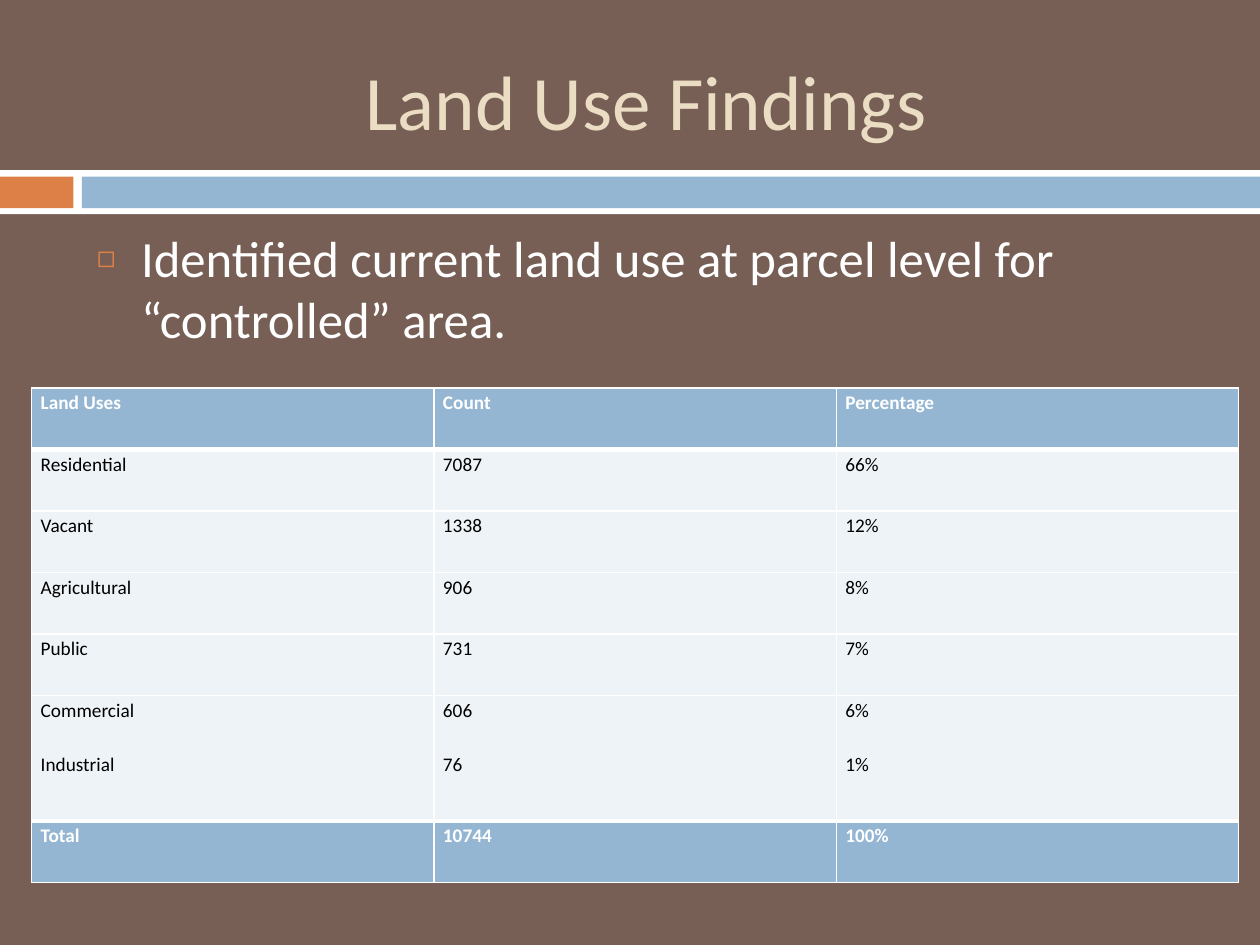
from lxml.etree import SubElement
from pptx import Presentation
from pptx.dml.color import RGBColor
from pptx.enum.shapes import MSO_SHAPE
from pptx.enum.text import MSO_ANCHOR, PP_ALIGN
from pptx.oxml.ns import qn
from pptx.util import Cm, Pt

WHITE, ORANGE, BLUE, PALE = "FFFFFF", "DD8047", "94B6D2", "EEF3F7"


def paint(fill, color):
    fill.solid()
    fill.fore_color.rgb = RGBColor.from_string(color)


def style(paragraph, size, color, bold=False):
    font = paragraph.font
    font.name, font.size, font.bold = "Calibri", Pt(size), bold
    paint(font.fill, color)


prs = Presentation()
prs.slide_width, prs.slide_height = Cm(25.4), Cm(19.05)
slide = prs.slides.add_slide(prs.slide_layouts[1])
paint(slide.background.fill, "775F55")

bands = [
    (0, 3.43, 25.4, 0.89, WHITE),
    (0, 3.56, 1.48, 0.64, ORANGE),
    (1.65, 3.56, 23.75, 0.64, BLUE),
]
for left, top, width, height, color in bands:
    band = slide.shapes.add_shape(
        MSO_SHAPE.RECTANGLE, Cm(left), Cm(top), Cm(width), Cm(height))
    band.shadow.inherit = False
    paint(band.fill, color)
    band.line.fill.background()

heading = slide.shapes.title
heading.left, heading.top, heading.width, heading.height = Cm(1.7), Cm(0.64), Cm(22.66), Cm(2.74)
heading.text_frame.text = "Land Use Findings"
heading.text_frame.vertical_anchor = MSO_ANCHOR.MIDDLE
heading.text_frame.paragraphs[0].alignment = PP_ALIGN.CENTER
style(heading.text_frame.paragraphs[0], 44, "EBDDC3")

finding = slide.placeholders[1]
finding.left, finding.top, finding.width, finding.height = Cm(1.7), Cm(4.45), Cm(22.66), Cm(12.5)
finding.text_frame.text = "Identified current land use at parcel level for “controlled” area."
statement = finding.text_frame.paragraphs[0]
statement.space_before = Pt(7)
bullet = statement._p.get_or_add_pPr()
bullet.set("marL", str(Cm(0.89)))
bullet.set("indent", str(-Cm(0.89)))
SubElement(SubElement(bullet, qn("a:buClr")), qn("a:srgbClr"), val=ORANGE)
SubElement(bullet, qn("a:buSzPct"), val="60000")
SubElement(bullet, qn("a:buChar"), char="◻")
style(statement, 29, WHITE)

land_uses = [
    ("Land Uses", "Count", "Percentage"),
    ("Residential", "7087", "66%"),
    ("Vacant", "1338", "12%"),
    ("Agricultural", "906", "8%"),
    ("Public", "731", "7%"),
    ("Commercial\nIndustrial", "606\n76", "6%\n1%"),
    ("Total", "10744", "100%"),
]
last = len(land_uses) - 1
table = slide.shapes.add_table(
    len(land_uses), 3, Cm(0.64), Cm(7.82), Cm(24.33), Cm(9.95)).table
for column in table.columns:
    column.width = Cm(8.11)

for r, land_use in enumerate(land_uses):
    table.rows[r].height = Cm(2.53 if "\n" in land_use[0] else 1.24)
    emphasis = r in (0, last)
    top_width = 3 if r in (1, last) else 1
    bottom_width = 3 if r in (0, last - 1) else 1
    for c, value in enumerate(land_use):
        cell = table.cell(r, c)
        cell.text = value
        cell.margin_left = cell.margin_right = Cm(0.18)
        cell.margin_top = cell.margin_bottom = 0
        borders = {"lnL": 1, "lnR": 1, "lnT": top_width, "lnB": bottom_width}
        for side, width in borders.items():
            border = SubElement(cell._tc.get_or_add_tcPr(), qn(f"a:{side}"), w=str(Pt(width)))
            SubElement(SubElement(border, qn("a:solidFill")), qn("a:srgbClr"), val=WHITE)
        paint(cell.fill, BLUE if emphasis else PALE)
        for i, line in enumerate(cell.text_frame.paragraphs):
            line.line_spacing = 1.15
            line.space_before = Pt(15.4 * i)
            style(line, 11, WHITE if emphasis else "000000", emphasis)

prs.save("out.pptx")
